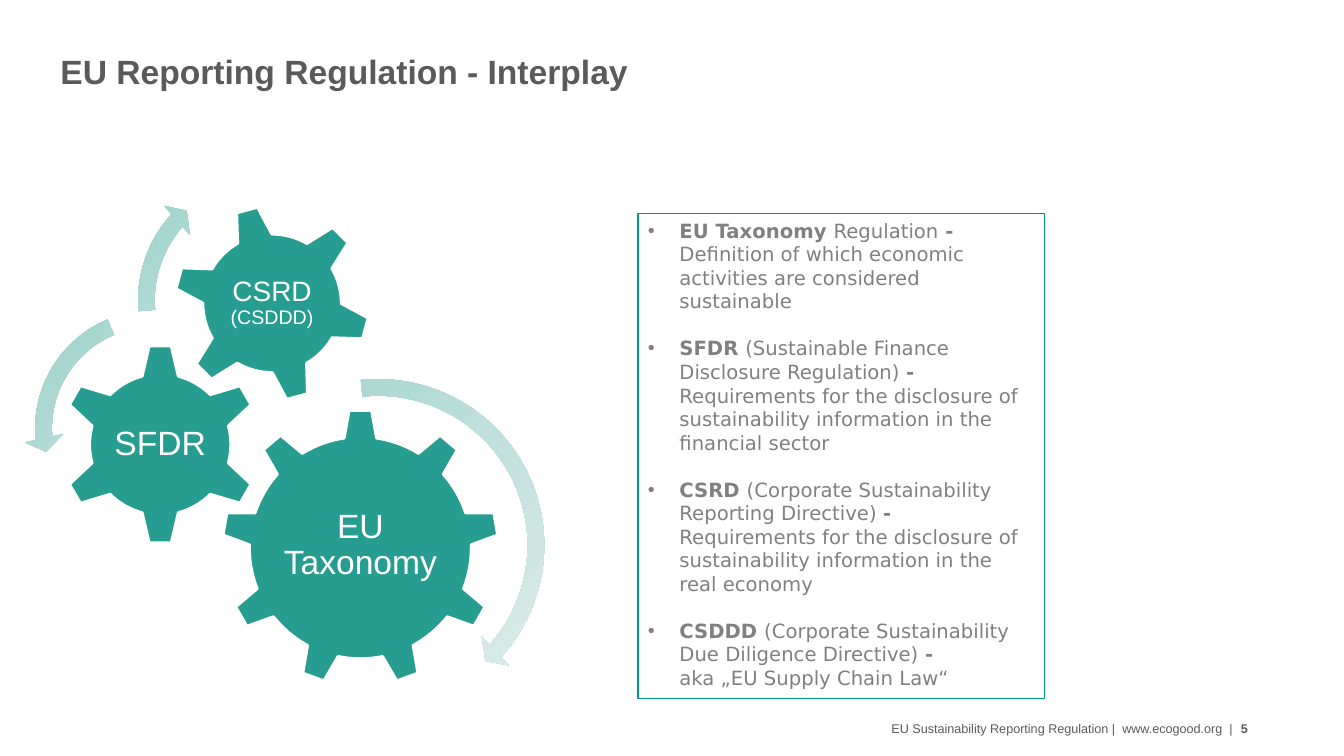
from copy import deepcopy
from dataclasses import dataclass

from lxml import etree
from pptx import Presentation
from pptx.dml.color import RGBColor
from pptx.enum.shapes import MSO_SHAPE
from pptx.enum.text import MSO_ANCHOR, PP_ALIGN
from pptx.oxml.ns import qn
from pptx.util import Emu, Pt

GEAR_6, GEAR_9, RECT = MSO_SHAPE.GEAR_6, MSO_SHAPE.GEAR_9, MSO_SHAPE.RECTANGLE
ARROW, LEFT_ARROW = MSO_SHAPE.CIRCULAR_ARROW, MSO_SHAPE.LEFT_CIRCULAR_ARROW
TOP, MIDDLE = MSO_ANCHOR.TOP, MSO_ANCHOR.MIDDLE
LEFT, CENTER, RIGHT = PP_ALIGN.LEFT, PP_ALIGN.CENTER, PP_ALIGN.RIGHT

# Grid of 160 columns by 90 rows with square cells
COLS, ROWS, CELL = 160, 90, 76200
TEAL, EDGE, WHITE, DARK, GREY = "279C90", "009687", "FFFFFF", "5A5A5A", "808080"
FADE = [("97D0C7", 0), ("C0E0DB", 0.5), ("E1EFED", 1)]
BULLET_INDENT = 3.75


@dataclass
class Label:
    box: tuple
    text: str
    fmt: dict
    align: PP_ALIGN = LEFT
    anchor: MSO_ANCHOR = TOP
    wrap: bool = True


@dataclass
class Gear:
    kind: MSO_SHAPE
    col: float
    row: float
    size: float
    percents: tuple
    runs: list
    turn: int = 0
    wrap: bool = True


@dataclass
class Arc:
    kind: MSO_SHAPE
    col: float
    row: float
    size: float
    percents: tuple


LABELS = [
    Label((7.2, 6.12, 104.4, 4.8), "EU Reporting Regulation - Interplay", {"size": 24, "bold": True}),
    Label((105.6, 85.8, 41.16, 1.8), "EU Sustainability Reporting Regulation |  www.ecogood.org  |",
          {"size": 9}, RIGHT, MIDDLE, False),
    Label((147.72, 85.8, 4.44, 1.8), "5", {"size": 9, "bold": True}, anchor=MIDDLE),
]
GEARS = [
    Gear(GEAR_9, 26.4, 48.72, 33, (10, 1.8), [("EU Taxonomy", 24)]),
    Gear(GEAR_6, 7.08, 40.92, 24, (15, 3.5), [("SFDR", 24)], wrap=False),
    Gear(GEAR_6, 20.64, 24.36, 23.52, (15, 3.5), [("CSRD ", 20), ("(CSDDD)", 14)], 15),
]
ARCS = [
    Arc(ARROW, 23.88, 43.8, 42.24, (4.7, 299, 2524.6, 15843.3, 5.5)),
    Arc(LEFT_ARROW, 2.88, 35.64, 30.72, (6.5, 430, 10489.1, 14837.8, 7.5)),
    Arc(ARROW, 15.12, 19.2, 33.12, (6, 394.1, 13313.8, 10508.2, 7)),
]
PANEL = (75.96, 25.44, 48.36, 57.72)
# Bold and regular runs alternate; a newline is a line break
RULES = [
    ("EU Taxonomy ", "Regulation", " - ",
     "Definition of which economic activities are considered sustainable"),
    ("SFDR ", "(Sustainable Finance Disclosure Regulation) ", "- ",
     "Requirements for the disclosure of sustainability information in the financial sector"),
    ("CSRD ", "(Corporate Sustainability Reporting Directive) ", "- ",
     "Requirements for the disclosure of sustainability information in the real economy"),
    ("CSDDD ", "(Corporate Sustainability Due Diligence Directive) ", "- ",
     "\naka „EU Supply Chain Law“"),
]


def rgb(hex_colour: str) -> RGBColor:
    return RGBColor.from_string(hex_colour)


def cells(*values: float) -> list:
    return [Emu(round(v * CELL)) for v in values]


def add_run(p, text: str, fmt: dict) -> None:
    r = p.add_run()
    r.text = text
    for name, value in ({"name": "Arial"} | fmt).items():
        if name == "color":
            r.font.color.rgb = rgb(value)
        else:
            setattr(r.font, name, Pt(value) if name == "size" else value)


def set_frame(tf, anchor: MSO_ANCHOR, wrap: bool, inset: float) -> None:
    margins = {f"margin_{side}": cells(inset)[0] for side in ("left", "top", "right", "bottom")}
    for name, value in ({"vertical_anchor": anchor, "word_wrap": wrap} | margins).items():
        setattr(tf, name, value)


def add_label(s, label: Label) -> None:
    tf = s.shapes.add_textbox(*cells(*label.box)).text_frame
    set_frame(tf, label.anchor, label.wrap, 0)
    p = tf.paragraphs[0]
    p.alignment = label.align
    add_run(p, label.text, {"color": DARK} | label.fmt)


def add_figure(s, item):
    sp = s.shapes.add_shape(item.kind, *cells(item.col, item.row, item.size, item.size))
    sp.shadow.inherit = False
    for i, percent in enumerate(item.percents):
        sp.adjustments[i] = percent / 100
    return sp


def add_gear(s, gear: Gear) -> None:
    sp = add_figure(s, gear)
    sp.fill.solid()
    sp.fill.fore_color.rgb = rgb(TEAL)
    sp.line.color.rgb = rgb(WHITE)
    sp.line.width = Pt(2)
    tf = sp.text_frame
    set_frame(tf, MIDDLE, gear.wrap, 0.5)
    # The text is turned back so that it stays level
    if gear.turn:
        sp.rotation = -gear.turn
        tf._txBody.bodyPr.set("rot", str(gear.turn * 60000))
    p = tf.paragraphs[0]
    p.alignment, p.line_spacing = CENTER, 0.9
    for text, size in gear.runs:
        add_run(p, text, {"size": size, "color": WHITE})


def add_arc(s, arc: Arc) -> None:
    sp = add_figure(s, arc)
    sp.line.fill.background()
    sp.fill.gradient()
    sp.fill.gradient_angle = 315
    stops = sp._element.spPr.find(".//" + qn("a:gsLst"))
    stops.append(deepcopy(stops[0]))
    for stop, (colour, position) in zip(sp.fill.gradient_stops, FADE):
        stop.color.rgb = rgb(colour)
        stop.position = position


def add_bullet(p) -> None:
    indent = round(BULLET_INDENT * CELL)
    pPr = p._p.get_or_add_pPr()
    pPr.set("marL", str(indent))
    pPr.set("indent", str(-indent))
    etree.SubElement(pPr, qn("a:buFont")).set("typeface", "Arial")
    etree.SubElement(pPr, qn("a:buChar")).set("char", "•")


def add_panel(s) -> None:
    sp = s.shapes.add_shape(RECT, *cells(*PANEL))
    sp.shadow.inherit = False
    sp.fill.background()
    sp.line.color.rgb = rgb(EDGE)
    sp.line.width = Pt(0.75)
    tf = sp.text_frame
    tf.word_wrap, tf.vertical_anchor = True, TOP
    for i, rule in enumerate(RULES):
        p = tf.add_paragraph() if i else tf.paragraphs[0]
        add_bullet(p)
        p.alignment = LEFT
        if i:
            p.space_before = Pt(16.8)
        for j, text in enumerate(rule):
            if text.startswith("\n"):
                p.add_line_break()
            add_run(p, text.strip("\n"),
                    {"name": "DejaVu Sans", "size": 14, "color": GREY, "bold": j % 2 == 0})


def main() -> None:
    prs = Presentation()
    prs.slide_width, prs.slide_height = cells(COLS, ROWS)
    s = prs.slides.add_slide(prs.slide_layouts[6])
    # Title and footer
    for label in LABELS:
        add_label(s, label)
    # Interlocking gears with their arrows
    for gear in GEARS:
        add_gear(s, gear)
    for arc in ARCS:
        add_arc(s, arc)
    # Explanations
    add_panel(s)
    prs.save("out.pptx")


if __name__ == "__main__":
    main()
